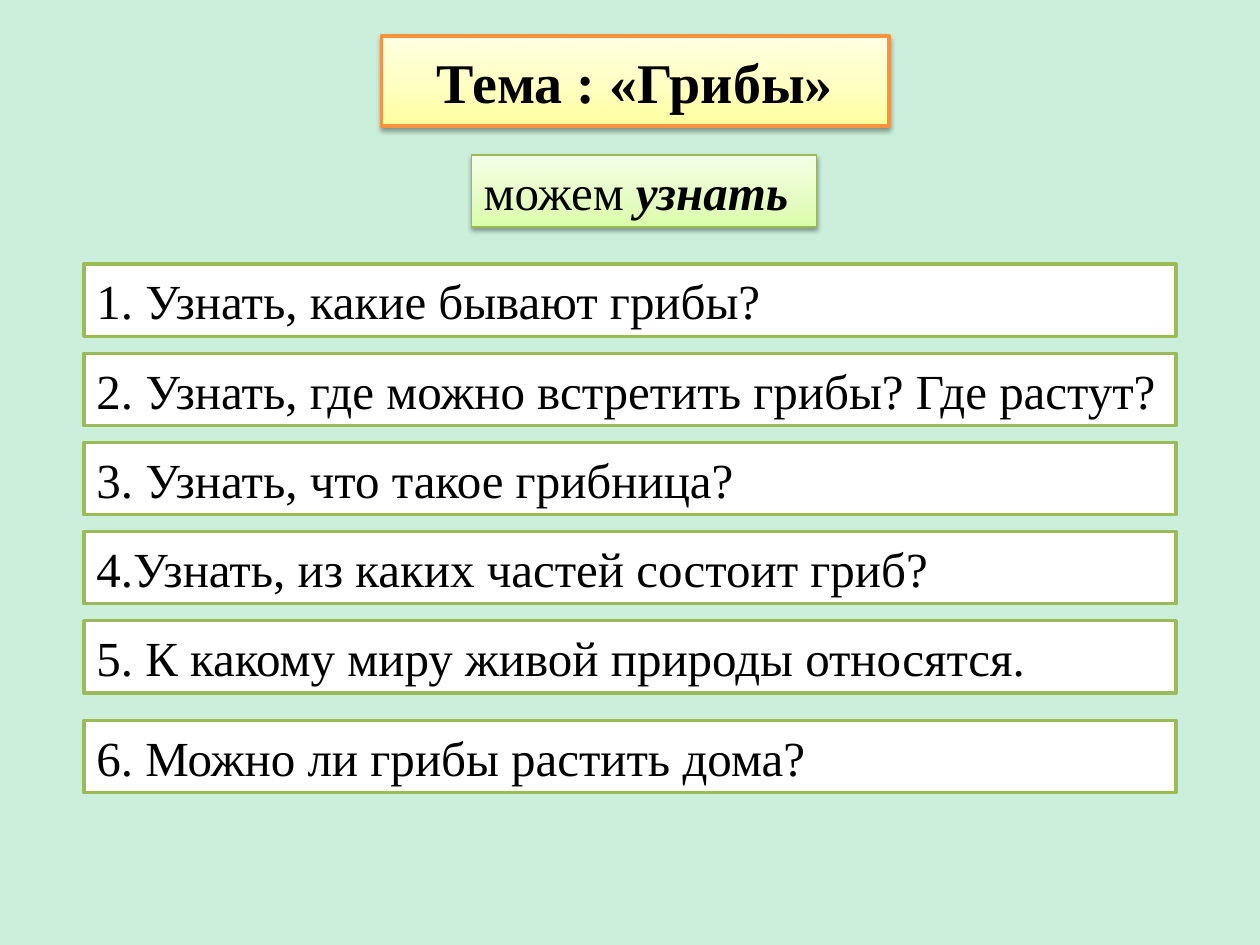
from lxml import etree
from pptx import Presentation
from pptx.dml.color import RGBColor
from pptx.enum import shapes, text
from pptx.oxml.ns import qn
from pptx.util import Pt

COLOURS = {
    "page": "CCEFDC", "ink": "000000", "white": "FFFFFF",
    "orange": "F69240", "green": "9BBB59", "leaf": "98B955",
}
YELLOW_STOPS = [(0, "FFFFA0"), (50, "FFFFC5"), (100, "FFFFE3")]
GREEN_STOPS = [(0, "DAFDA7"), (35, "E4FCC2"), (100, "F5FFE7")]
FONT = "Times New Roman"
QUESTIONS = [
    "1. Узнать, какие бывают грибы?",
    "2. Узнать, где можно встретить грибы? Где растут?",
    "3. Узнать, что такое грибница?",
    "4.Узнать, из каких частей состоит гриб?",
    "5. К какому миру живой природы относятся.",
    "6. Можно ли грибы растить дома?",
]


def colour(name):
    """Return the named colour."""
    return RGBColor.from_string(COLOURS[name])


def add_panel(page, box, line, width):
    """Add a white outlined rectangle without a shadow."""
    panel = page.shapes.add_shape(
        shapes.MSO_SHAPE.RECTANGLE, *(Pt(length) for length in box))
    panel.shadow.inherit = False
    panel.fill.solid()
    panel.fill.fore_color.rgb = colour("white")
    panel.line.color.rgb = colour(line)
    panel.line.width = Pt(width)
    return panel


def add_glow(panel, stops):
    """Give a panel an upward gradient and a soft shadow below."""
    panel.fill.gradient()
    panel.fill.gradient_angle = 90
    properties = panel._element.spPr
    stop_list = properties.find(".//" + qn("a:gsLst"))
    stop_list.clear()
    for position, value in stops:
        stop = etree.SubElement(stop_list, qn("a:gs"), pos=str(position * 1000))
        etree.SubElement(stop, qn("a:srgbClr"), val=value)
    shadow = etree.SubElement(
        properties.find(qn("a:effectLst")), qn("a:outerShdw"),
        blurRad=str(Pt(3.1)), dist=str(Pt(1.6)), dir="5400000", rotWithShape="0")
    shade = etree.SubElement(shadow, qn("a:srgbClr"), val=COLOURS["ink"])
    etree.SubElement(shade, qn("a:alpha"), val="38000")


def write(panel, spans, size, align=text.PP_ALIGN.LEFT):
    """Write one paragraph of (words, bold, italic) runs."""
    frame = panel.text_frame
    frame.word_wrap = True
    frame.vertical_anchor = text.MSO_ANCHOR.MIDDLE
    para = frame.paragraphs[0]
    para.alignment = align
    for words, bold, italic in spans:
        span = para.add_run()
        span.text = words
        span.font.name = FONT
        span.font.size = Pt(size)
        span.font.bold = bold
        span.font.italic = italic
        span.font.color.rgb = colour("ink")


def add_title(page, box):
    """Add the framed topic of the lesson."""
    panel = add_panel(page, box, "orange", 2.25)
    add_glow(panel, YELLOW_STOPS)
    write(panel, [("Тема : «Грибы»", True, False)], 32, text.PP_ALIGN.CENTER)


def add_subtitle(page, box):
    """Add the green label above the questions."""
    panel = add_panel(page, box, "leaf", 0.75)
    add_glow(panel, GREEN_STOPS)
    write(panel, [("можем ", False, False), ("узнать", True, True)], 28)


def add_questions(page, box, row_height=41.2, last_gap=15.9):
    """Stack the questions evenly, with the last one set apart at the bottom."""
    left, top, width, height = box
    last = len(QUESTIONS) - 1
    last_top = height - row_height
    pitch = (last_top - last_gap - row_height) / (last - 1)
    for index, question in enumerate(QUESTIONS):
        offset = last_top if index == last else index * pitch
        row = (left, top + offset, width, row_height)
        write(add_panel(page, row, "green", 2), [(question, False, False)], 28)


def main():
    """Build and save the slide."""
    deck = Presentation()
    deck.slide_width, deck.slide_height = Pt(720), Pt(540)
    page = deck.slides.add_slide(deck.slide_layouts[6])
    page.background.fill.solid()
    page.background.fill.fore_color.rgb = colour("page")
    add_title(page, (218, 20.6, 289.8, 51.2))
    add_questions(page, (48, 151, 624, 302))
    add_subtitle(page, (269.3, 88.6, 197.5, 41.2))
    deck.save("out.pptx")


if __name__ == "__main__":
    main()
